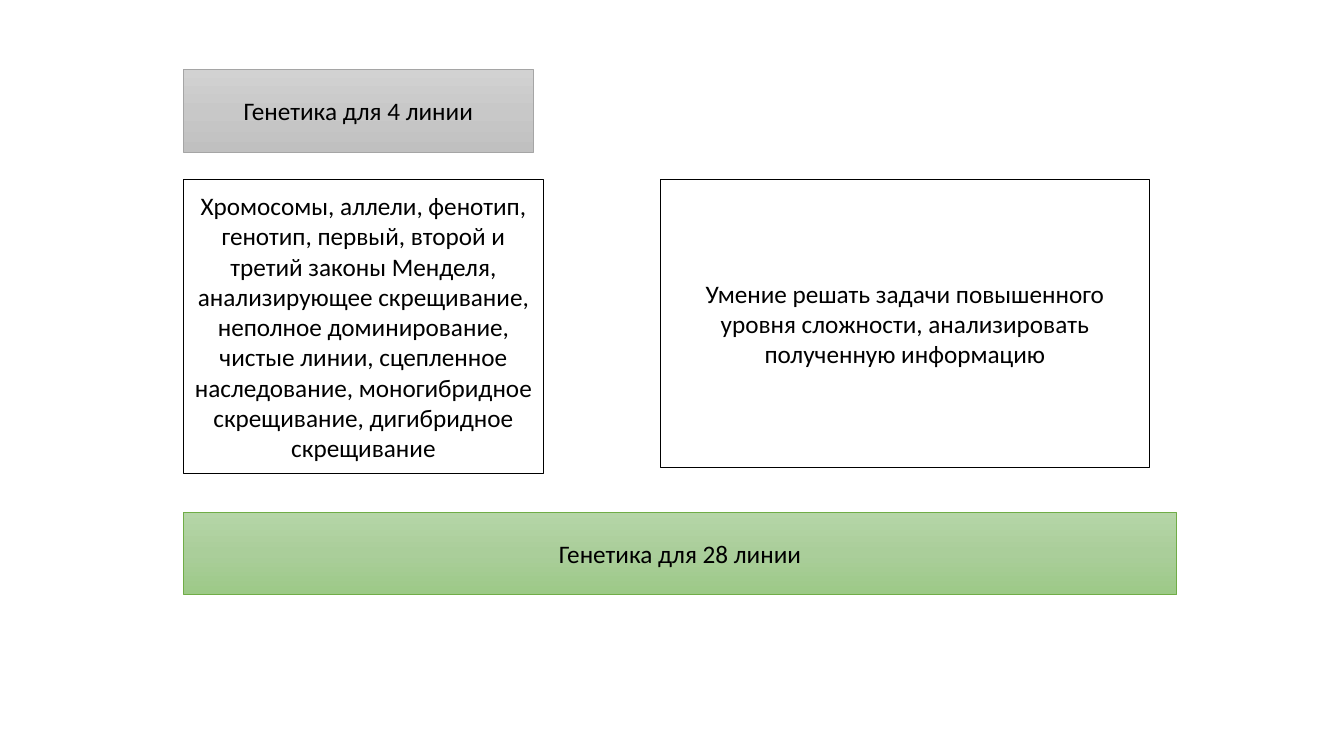
from copy import deepcopy

from pptx import Presentation
from pptx.dml.color import RGBColor
from pptx.enum.shapes import MSO_SHAPE
from pptx.enum.text import MSO_ANCHOR, PP_ALIGN
from pptx.oxml.ns import qn
from pptx.util import Inches, Pt

RECT = MSO_SHAPE.RECTANGLE
MIDDLE = MSO_ANCHOR.MIDDLE
CENTER = PP_ALIGN.CENTER

COLORS = {
    "white": "FFFFFF",
    "black": "000000",
    "gray": "A5A5A5",
    "gray top": "D2D2D2",
    "gray mid": "C8C8C8",
    "gray low": "C0C0C0",
    "green": "70AD47",
    "green top": "B5D5A7",
    "green mid": "AACE9A",
    "green low": "9CC987",
}

LEFT = 1.82
BODY_TOP = 1.78
BAR_HIGH = 0.82


def color(name):
    return RGBColor.from_string(COLORS[name])


class Board:
    font = "Calibri"
    size = 18

    def __init__(self, slide):
        self.slide = slide

    def box(self, text, left, top, width, height, edge="black", weight=1):
        shape = self.slide.shapes.add_shape(
            RECT, Inches(left), Inches(top), Inches(width), Inches(height))
        shape.shadow.inherit = False
        shape.fill.solid()
        shape.fill.fore_color.rgb = color("white")
        shape.line.color.rgb = color(edge)
        shape.line.width = Pt(weight)
        frame = shape.text_frame
        frame.text = text
        frame.word_wrap = True
        frame.vertical_anchor = MIDDLE
        para = frame.paragraphs[0]
        para.alignment = CENTER
        font = para.runs[0].font
        font.name = self.font
        font.size = Pt(self.size)
        font.color.rgb = color("black")
        return shape

    def bar(self, text, top, width, tone):
        shape = self.box(text, LEFT, top, width, BAR_HIGH, tone, 0.5)
        fill = shape.fill
        fill.gradient()
        fill.gradient_angle = 270
        stops = shape.element.spPr.find(qn("a:gradFill")).find(qn("a:gsLst"))
        stops.append(deepcopy(stops[0]))
        parts = zip(fill.gradient_stops, (0, 0.5, 1), ("top", "mid", "low"))
        for stop, place, part in parts:
            stop.position = place
            stop.color.rgb = color(f"{tone} {part}")


def main():
    deck = Presentation()
    deck.slide_width = Inches(13.33)
    deck.slide_height = Inches(7.5)
    board = Board(deck.slides.add_slide(deck.slide_layouts[6]))

    board.bar("Генетика для 4 линии", 0.69, 3.47, "gray")
    board.box(
        "Хромосомы, аллели, фенотип, генотип, первый, второй и третий законы "
        "Менделя, анализирующее скрещивание, неполное доминирование, чистые "
        "линии, сцепленное наследование, моногибридное скрещивание, "
        "дигибридное скрещивание",
        LEFT, BODY_TOP, 3.57, 2.92)
    board.bar("Генетика для 28 линии", 5.08, 9.85, "green")
    board.box(
        "Умение решать задачи повышенного уровня сложности, анализировать "
        "полученную информацию",
        6.55, BODY_TOP, 4.85, 2.86)

    deck.save("out.pptx")


if __name__ == "__main__":
    main()
